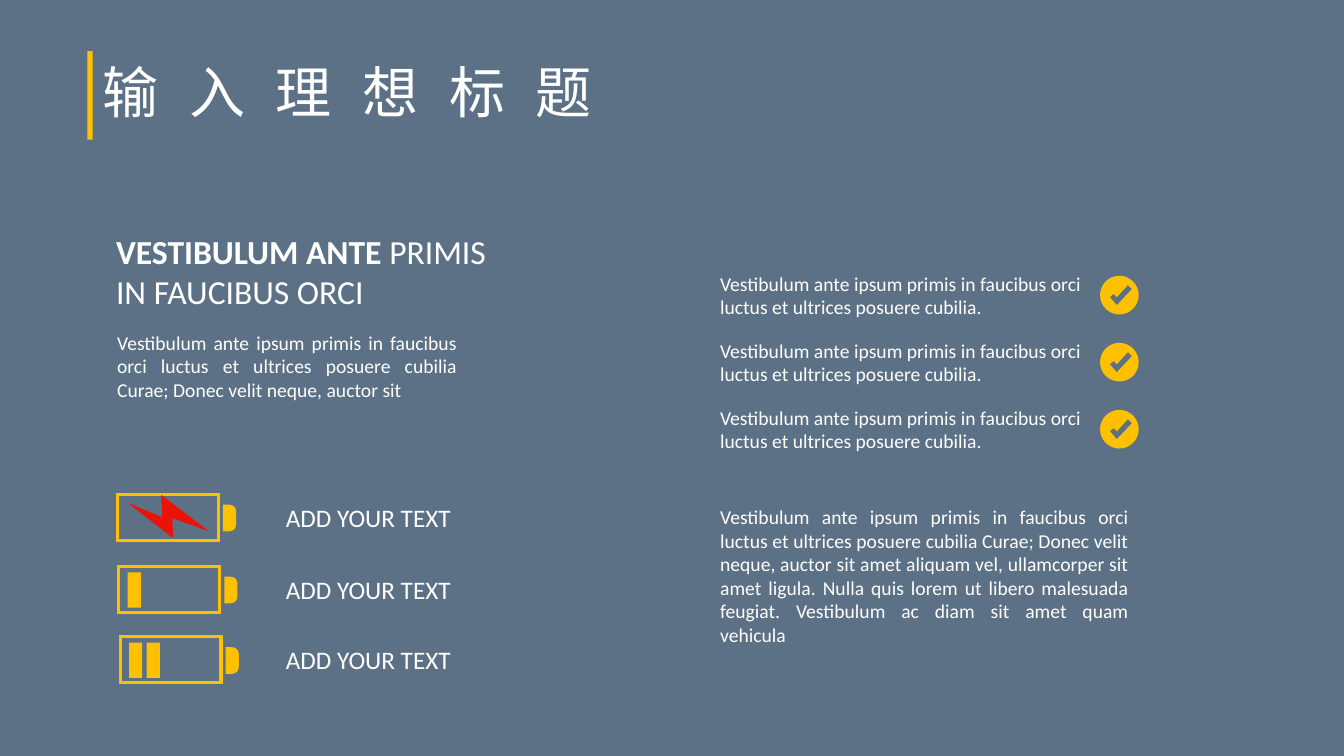
from lxml import etree
from pptx import Presentation
from pptx.dml.color import RGBColor
from pptx.enum.shapes import MSO_SHAPE
from pptx.enum.text import MSO_ANCHOR, MSO_AUTO_SIZE, PP_ALIGN
from pptx.oxml.ns import qn
from pptx.util import Pt

RECT = MSO_SHAPE.RECTANGLE
CAP = MSO_SHAPE.ROUND_2_SAME_RECTANGLE
MIDDLE = MSO_ANCHOR.MIDDLE
GROW, NO_FIT = MSO_AUTO_SIZE.SHAPE_TO_FIT_TEXT, MSO_AUTO_SIZE.NONE
LEFT, JUSTIFY = PP_ALIGN.LEFT, PP_ALIGN.JUSTIFY

ITEM = "Vestibulum ante ipsum primis in faucibus orci luctus et ultrices posuere cubilia"
INTRO = ITEM + " Curae; Donec velit neque, auctor sit"
BODY = INTRO + (" amet aliquam vel, ullamcorper sit amet ligula. Nulla quis lorem ut libero"
                " malesuada feugiat. Vestibulum ac diam sit amet quam vehicula")

BOLT = [(149, 379.4), (115.2, 353.5), (115.9, 369.4), (91.4, 359.3),
        (123.8, 384.5), (123.1, 370.1)]
TICK = [(-1.8, 7.2), (-6.8, 1.5), (-4, -0.8), (-1.8, 1.5), (6.1, -7.2), (9, -4.3)]
RADIUS = 13.8
QUARTERS = [(0, -RADIUS), (-RADIUS, 0), (0, RADIUS), (RADIUS, 0), (0, -RADIUS)]
ARC = 0.5523  # Bezier handle length of a quarter circle of radius 1
BATTERIES = [(84, 353.1, 0), (84.9, 404.6, 1), (85.9, 454.9, 2)]  # left, top, bars


def rgb(color):
    return RGBColor.from_string(color)


def round_quarters(sp):
    """Turn the four edges of the first contour into quarter circles."""
    center = sp.width / 2, sp.height / 2
    path = sp._element.find(".//" + qn("a:path"))
    start, *edges = path[:5]
    x0, y0 = (int(start[0].get(k)) for k in "xy")
    for edge in edges:
        x1, y1 = (int(edge[0].get(k)) for k in "xy")
        handles = [(x0 + ARC * (x1 - center[0]), y0 + ARC * (y1 - center[1])),
                   (x1 + ARC * (x0 - center[0]), y1 + ARC * (y0 - center[1]))]
        curve = etree.Element(qn("a:cubicBezTo"))
        for x, y in handles + [(x1, y1)]:
            etree.SubElement(curve, qn("a:pt"), x=str(round(x)), y=str(round(y)))
        path.replace(edge, curve)
        x0, y0 = x1, y1


class Deck:
    back, accent, red, white = "5C7185", "FFC000", "EC1207", "FFFFFF"
    latin, cjk = "Calibri", "Noto Sans CJK SC"

    def __init__(self):
        self.prs = Presentation()
        self.prs.slide_width, self.prs.slide_height = Pt(960), Pt(540)
        self.s = self.prs.slides.add_slide(self.prs.slide_layouts[6])
        self.s.background.fill.solid()
        self.s.background.fill.fore_color.rgb = rgb(self.back)

    def group(self):
        return self.s.shapes.add_group_shape().shapes

    def paint(self, sp, fill, line=None):
        sp.shadow.inherit = False
        sp.fill.solid()
        sp.fill.fore_color.rgb = rgb(fill)
        if line:
            sp.line.color.rgb = rgb(line)
            sp.line.width = Pt(2.25)
            ln = sp._element.spPr.find(qn("a:ln"))
            etree.SubElement(ln, qn("a:miter"), lim="800000")
        else:
            sp.line.fill.background()
        return sp

    def shape(self, kind, x, y, w, h, fill=accent, line=None, group=None):
        shapes = self.s.shapes if group is None else group
        sp = shapes.add_shape(kind, Pt(x), Pt(y), Pt(w), Pt(h))
        return self.paint(sp, fill, line)

    def outline(self, contours, fill, group=None):
        """Draw closed contours as one shape; an inner contour is a hole."""
        shapes = self.s.shapes if group is None else group
        first, *holes = [[(Pt(x), Pt(y)) for x, y in c] for c in contours]
        fb = shapes.build_freeform(*first[0], scale=1.0)
        fb.add_line_segments(first[1:], close=True)
        for hole in holes:
            fb.move_to(*hole[0])
            fb.add_line_segments(hole[1:], close=True)
        return self.paint(fb.convert_to_shape(), fill)

    def text(self, text, x, y, w, h, size=14, font=latin, align=LEFT, lead="",
             wrap=True, fit=GROW, anchor=None, spacing=None, line_spacing=None,
             group=None):
        """Add a text box; lead is a bold opening run, spacing is between letters."""
        shapes = self.s.shapes if group is None else group
        tf = shapes.add_textbox(Pt(x), Pt(y), Pt(w), Pt(h)).text_frame
        tf.word_wrap, tf.auto_size = wrap, fit
        if anchor is not None:
            tf.vertical_anchor = anchor
        p = tf.paragraphs[0]
        p.alignment, p.line_spacing = align, line_spacing
        for part, bold in ((lead, True), (text, False)):
            if not part:
                continue
            r = p.add_run()
            r.text = part
            r.font.size, r.font.name, r.font.bold = Pt(size), font, bold
            r.font.color.rgb = rgb(self.white)
            rPr = r.font._element
            etree.SubElement(rPr, qn("a:ea")).set("typeface", font)
            if spacing:
                rPr.set("spc", str(spacing * 100))

    def battery(self, x, y, bars):
        g = self.group()
        self.shape(RECT, x, y, 72, 32.8, self.back, self.accent, group=g)
        cap = self.shape(CAP, x + 70.5, y + 12.2, 19, 9.4, group=g)
        cap.rotation = 90
        cap.adjustments[0] = 0.5
        for i in range(bars):
            self.shape(RECT, x + 6.3 + 12.6 * i, y + 4.2, 9.4, 25.2)
        self.text("ADD YOUR TEXT", 197.1, y + 2.1, 133.2, 28.8, size=18, wrap=False)

    def check_item(self, y):
        g = self.group()
        cx, cy = 799.6, y + 20.4
        contours = [[(cx + dx, cy + dy) for dx, dy in c] for c in (QUARTERS, TICK)]
        round_quarters(self.outline(contours, self.accent, g))
        self.text(ITEM + ".", 507.3, y, 278.6, 41, group=g)


def main():
    d = Deck()
    d.shape(RECT, 62.4, 36.5, 3.7, 63.3)
    d.text("输入理想标题", 66.2, 15.8, 828, 104.4, size=40, font=d.cjk, fit=NO_FIT,
           anchor=MIDDLE, spacing=22, line_spacing=0.9)
    for x, y, bars in BATTERIES:
        d.battery(x, y, bars)
    d.outline([BOLT], d.red)
    d.text(INTRO, 76.6, 232.6, 257, 58.3, align=JUSTIFY)
    d.text("PRIMIS IN FAUCIBUS ORCI", 75.8, 161.3, 303.8, 65.5, size=24,
           lead="VESTIBULUM ANTE ")
    for i in range(3):
        d.check_item(190.4 + 47.9 * i)
    d.text(BODY, 507.3, 357.1, 306, 108.7, align=JUSTIFY)
    d.prs.save("out.pptx")


if __name__ == "__main__":
    main()
